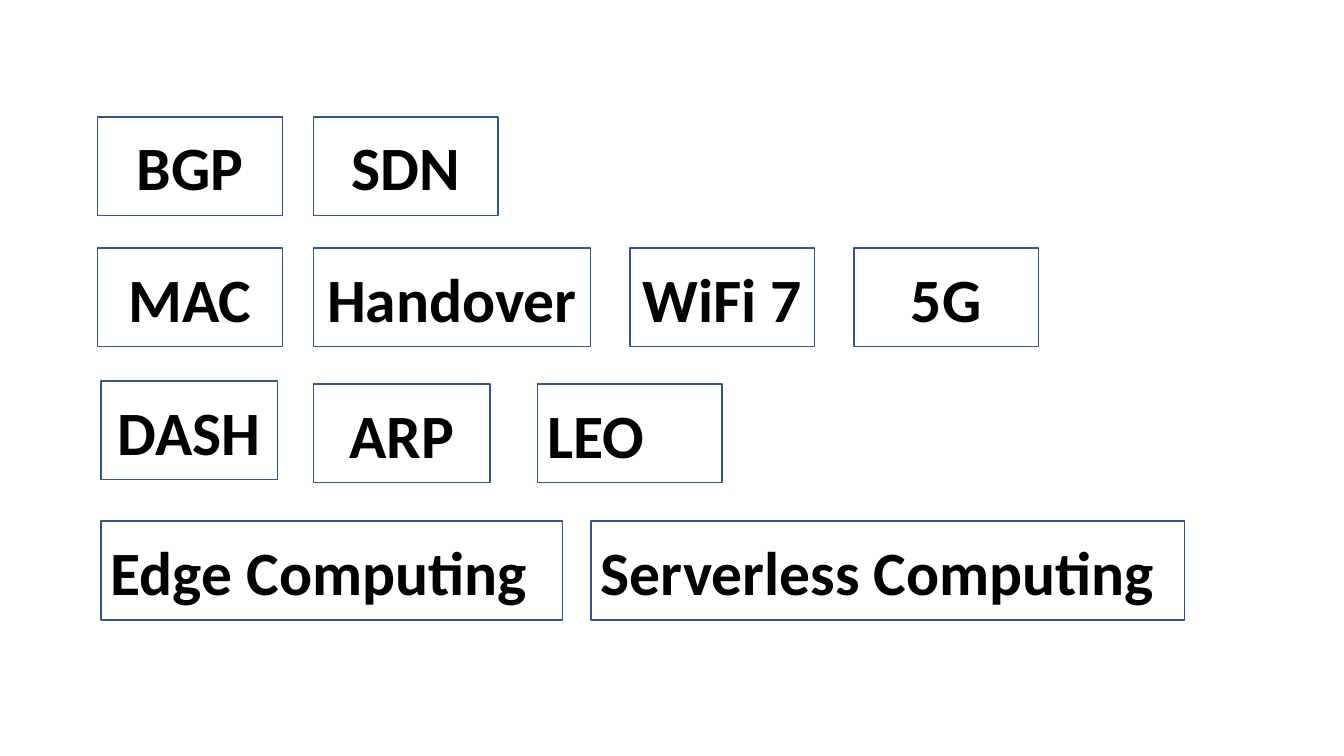
from dataclasses import dataclass

from pptx import Presentation
from pptx.dml.color import RGBColor
from pptx.enum import shapes, text
from pptx.util import Inches, Pt

CENTER, LEFT = text.PP_ALIGN.CENTER, text.PP_ALIGN.LEFT
BOX_HEIGHT = 0.98

# Each topic: label, left, top, width, alignment
TOPICS = [
    ("BGP", 0.97, 1.16, 1.83, CENTER),
    ("SDN", 3.11, 1.16, 1.83, CENTER),
    ("MAC", 0.97, 2.46, 1.83, CENTER),
    ("Handover", 3.11, 2.46, 2.75, CENTER),
    ("WiFi 7", 6.25, 2.46, 1.83, CENTER),
    ("5G", 8.47, 2.46, 1.83, CENTER),
    ("DASH", 1, 3.78, 1.75, CENTER),
    ("ARP", 3.11, 3.81, 1.75, CENTER),
    ("LEO", 5.33, 3.81, 1.83, LEFT),
    ("Edge Computing", 1, 5.17, 4.58, LEFT),
    ("Serverless Computing", 5.86, 5.17, 5.89, LEFT),
]


@dataclass(frozen=True)
class Theme:
    font: str = "Calibri"
    size: int = 44
    ink: str = "000000"
    outline: str = "325491"
    outline_width: float = 1


THEME = Theme()


def write(box, label, *, align, size=THEME.size, color=THEME.ink, bold=True):
    frame = box.text_frame
    frame.word_wrap = True
    frame.vertical_anchor = text.MSO_ANCHOR.MIDDLE
    para = frame.paragraphs[0]
    para.alignment = align
    span = para.add_run()
    span.text = label
    span.font.name = THEME.font
    span.font.size = Pt(size)
    span.font.bold = bold
    span.font.color.rgb = RGBColor.from_string(color)


def add_topic(page, label, left, top, width, align):
    box = page.shapes.add_shape(
        shapes.MSO_SHAPE.RECTANGLE,
        Inches(left), Inches(top), Inches(width), Inches(BOX_HEIGHT),
    )
    box.shadow.inherit = False
    box.fill.background()
    box.line.color.rgb = RGBColor.from_string(THEME.outline)
    box.line.width = Pt(THEME.outline_width)
    write(box, label, align=align)


def main():
    deck = Presentation()
    deck.slide_width, deck.slide_height = Inches(13.33), Inches(7.5)
    blank_layout = deck.slide_layouts[6]
    page = deck.slides.add_slide(blank_layout)
    for topic in TOPICS:
        add_topic(page, *topic)
    deck.save("out.pptx")


if __name__ == "__main__":
    main()
